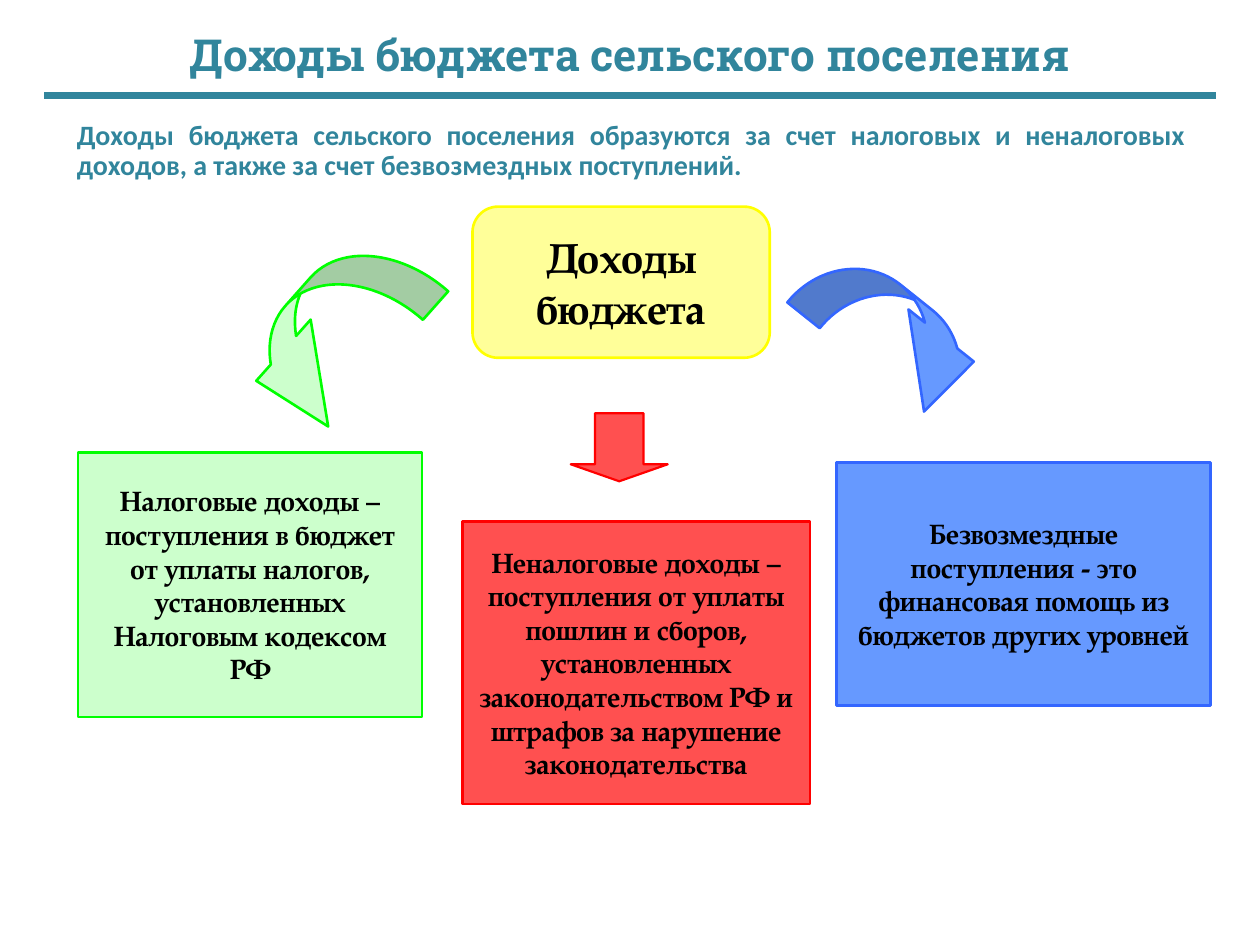
from lxml.etree import SubElement
from pptx import Presentation
from pptx.dml.color import RGBColor as RGB
from pptx.enum.shapes import MSO_CONNECTOR as Link, MSO_SHAPE as Kind
from pptx.enum.text import MSO_ANCHOR as Anchor, MSO_AUTO_SIZE as Fit, PP_ALIGN as Align
from pptx.oxml.ns import qn
from pptx.util import Inches, Pt

WIDE, HIGH = 10, 7.5
TEAL, BLACK = RGB(0x31, 0x85, 0x9C), RGB(0, 0, 0)
YELLOW = RGB(0xFF, 0xFF, 0x99), RGB(0xFF, 0xFF, 0)
GREEN = RGB(0xCC, 0xFF, 0xCC), RGB(0, 0xFF, 0)
RED = RGB(0xFF, 0x50, 0x50), RGB(0xFF, 0, 0)
BLUE = RGB(0x66, 0x99, 0xFF), RGB(0x33, 0x66, 0xFF)
SERIF = "TeX Gyre Pagella"

# Boxes are left, top, width, height in inches, relative to the chart region.
CARDS = [
    ((0.12, 1.95, 2.73, 2.1), GREEN, 0.12,
     "Налоговые доходы – поступления в бюджет от уплаты налогов, "
     "установленных Налоговым кодексом РФ"),
    ((3.17, 2.5, 2.76, 2.24), RED, 0,
     "Неналоговые доходы – поступления от уплаты пошлин и сборов, установленных "
     "законодательством РФ и штрафов за нарушение законодательства"),
    ((6.14, 2.03, 2.97, 1.93), BLUE, 0.12,
     "Безвозмездные поступления - это финансовая помощь из бюджетов других уровней"),
]
ARROWS = [
    (Kind.CURVED_DOWN_ARROW, (5.77, 0.7, 1.72, 0.67), BLUE, 1.5, 38.6, (0.49, 0.99, 0.83)),
    (Kind.CURVED_UP_ARROW, (1.26, 0.59, 1.76, 0.89), GREEN, 1.5, 131.6, (0.34, 0.73, 0.75)),
    (Kind.DOWN_ARROW, (4.03, 1.64, 0.77, 0.54), RED, 1.25, 0, (0.5, 0.25)),
]


def apply(item, form):
    for key, value in form.items():
        setattr(item, key, value)


def write(shape, text, face, size, color, frame, para):
    body = shape.text_frame
    body.text = text
    apply(body, dict(word_wrap=True, auto_size=Fit.NONE) | frame)
    line = body.paragraphs[0]
    apply(line, para)
    font = line.runs[0].font
    apply(font, dict(name=face, size=Pt(size), bold=True))
    font.color.rgb = color
    return line


def place(shape, box):
    apply(shape, dict(zip(("left", "top", "width", "height"), map(Inches, box))))


def add_form(slide, region, kind, box, colors, weight=1.5, turn=0, adjust=()):
    """Draw a preset shape at a box measured from the region's corner."""
    left, top, wide, high = box
    shape = slide.shapes.add_shape(
        kind, *map(Inches, (region[0] + left, region[1] + top, wide, high)))
    shape.shadow.inherit = False
    shape.rotation = turn
    for spot, value in enumerate(adjust):
        shape.adjustments[spot] = value
    shape.fill.solid()
    shape.fill.fore_color.rgb, shape.line.color.rgb = colors
    shape.line.width = Pt(weight)
    return shape


def label(shape, text, size, side, edge=0):
    frame = dict(vertical_anchor=Anchor.MIDDLE,
                 margin_left=Inches(side), margin_right=Inches(side),
                 margin_top=Inches(edge), margin_bottom=Inches(edge))
    write(shape, text, SERIF, size, BLACK, frame, dict(alignment=Align.CENTER))


def add_head(slide, box):
    left, top, wide, high = box
    title = slide.shapes.title
    place(title, box)
    write(title, "Доходы бюджета сельского поселения", "Roboto Slab", 25.2, TEAL,
          dict(vertical_anchor=Anchor.MIDDLE), dict(alignment=Align.CENTER))
    level = Inches(top + high + 0.14)
    rule = slide.shapes.add_connector(
        Link.STRAIGHT, Inches(left - 0.15), level, Inches(left + wide + 0.15), level)
    rule.line.color.rgb = TEAL
    rule.line.width = Pt(3.75)
    SubElement(rule._element.spPr, qn("a:effectLst"))


def add_lead(slide, box):
    lead = slide.placeholders[1]
    place(lead, box)
    line = write(
        lead, "Доходы бюджета сельского поселения образуются за счет налоговых и "
        "неналоговых доходов, а также за счет безвозмездных поступлений.",
        "Calibri", 16, TEAL, dict(vertical_anchor=Anchor.TOP),
        dict(alignment=Align.JUSTIFY, line_spacing=0.9, space_before=Pt(3.2)))
    props = line._p.get_or_add_pPr()
    props.set("marL", "0")
    props.set("indent", "0")
    SubElement(props, qn("a:buNone"))


def add_scheme(slide, region):
    """Draw the income box, its three sources and the arrows to them."""
    root = add_form(slide, region, Kind.ROUNDED_RECTANGLE, (3.25, 0, 2.36, 1.2),
                    YELLOW, adjust=(0.17,))
    label(root, "Доходы бюджета", 24, 0.14, 0.05)
    for box, colors, side, text in CARDS:
        card = add_form(slide, region, Kind.RECTANGLE, box, colors)
        label(card, text, 16, side)
    for kind, box, *look in ARROWS:
        add_form(slide, region, kind, box, *look)


def main():
    deck = Presentation()
    deck.slide_width, deck.slide_height = Inches(WIDE), Inches(HIGH)
    slide = deck.slides.add_slide(deck.slide_layouts[1])
    edge = WIDE / 20
    span = WIDE - 2 * edge
    add_head(slide, (edge, 0.24, span, 0.38))
    add_lead(slide, (edge + 0.01, 0.91, span, 0.58))
    add_scheme(slide, (edge, 1.64))
    deck.save("out.pptx")


if __name__ == "__main__":
    main()
